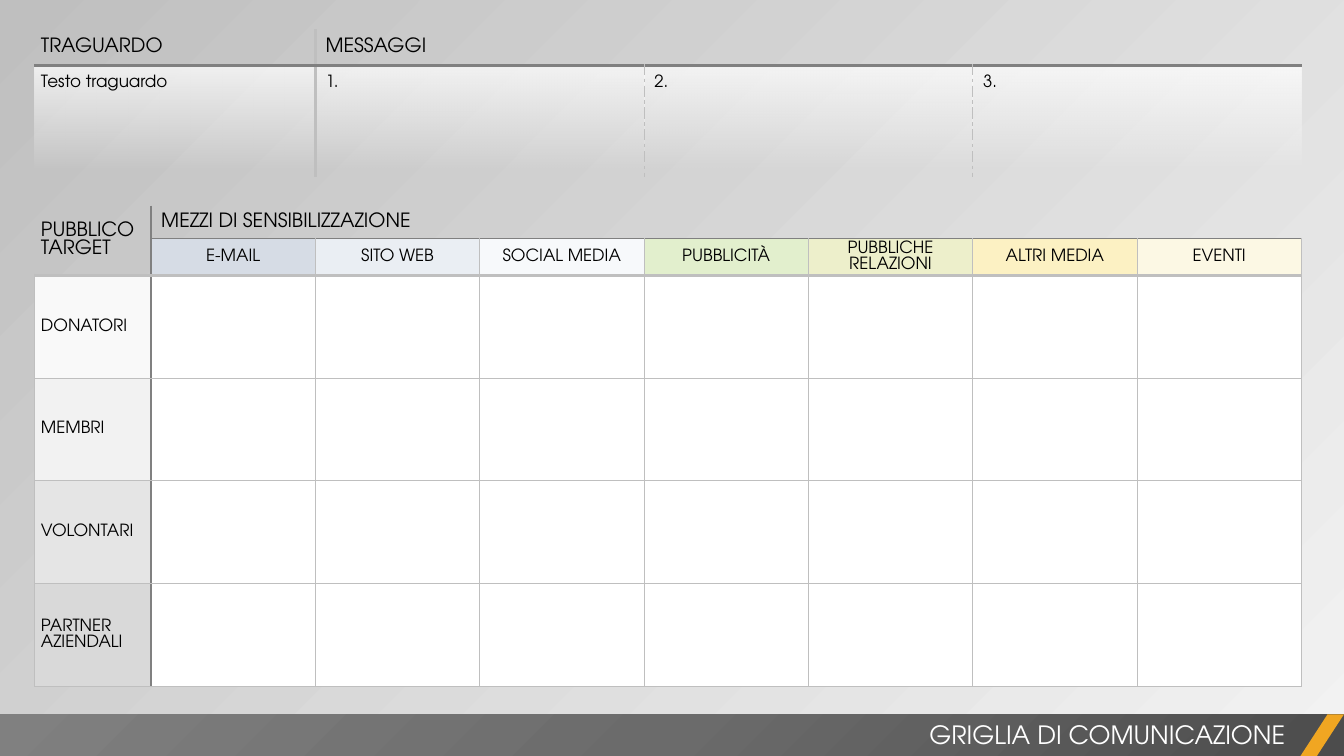
import pptx
import pptx.dml.color
import pptx.enum.shapes
import pptx.enum.text
import pptx.oxml
import pptx.oxml.ns
import pptx.util

Pt = pptx.util.Pt
qn = pptx.oxml.ns.qn
Align = pptx.enum.text.PP_ALIGN
Anchor = pptx.enum.text.MSO_ANCHOR
Preset = pptx.enum.shapes.MSO_SHAPE

FONT = "TeX Gyre Adventor"
COLOURS = {
    "text": "000000", "white": "FFFFFF", "accent": "F0A622",
    "line": "BFBFBF", "rule": "808080", "pale": "F2F2F2",
    "bar_dark": "4C4C4C", "bar_middle": "6B6B6B", "bar_light": "808080",
    "email": "D6DCE5", "website": "EAEEF3", "social": "F7F9FB",
    "advertising": "E2EFCD", "relations": "EDEFCB",
    "other_media": "FCF1C3", "events": "FCF8E4",
    "donors": "F9F9F9", "members": "F2F2F2",
    "volunteers": "E5E5E5", "partners": "D9D9D9",
}
LEFT = 24.6
AUDIENCE_WIDTH = 83.3
MEDIA_WIDTH = 117.4
NARROW_INSET, WIDE_INSET = 4.7, 7.3
BAR_TOP, BAR_HEIGHT = 510.2, 30

MEDIA = [
    ("E-MAIL", "email"), ("SITO WEB", "website"), ("SOCIAL MEDIA", "social"),
    ("PUBBLICITÀ", "advertising"), ("PUBBLICHE RELAZIONI", "relations"),
    ("ALTRI MEDIA", "other_media"), ("EVENTI", "events"),
]
AUDIENCES = [
    ("DONATORI", "donors"), ("MEMBRI", "members"),
    ("VOLONTARI", "volunteers"), ("PARTNER AZIENDALI", "partners"),
]


class SlideBuilder:
    def __init__(self, presentation):
        self.slide = presentation.slides.add_slide(presentation.slide_layouts[5])

    def colour(self, name):
        return pptx.dml.color.RGBColor.from_string(COLOURS[name])

    def gradient(self, fill, properties, stops, direction):
        fill.solid()
        fill.fore_color.rgb = self.colour("white")
        stop_xml = "".join(
            f'<a:gs pos="{position * 1000}"><a:srgbClr val="{COLOURS[name]}">'
            f'<a:alpha val="{opacity * 1000}"/></a:srgbClr></a:gs>'
            for position, name, opacity in stops
        )
        gradient = pptx.oxml.parse_xml(
            f'<a:gradFill {pptx.oxml.ns.nsdecls("a")} rotWithShape="1">'
            f"<a:gsLst>{stop_xml}</a:gsLst>{direction}</a:gradFill>"
        )
        properties.replace(properties.find(qn("a:solidFill")), gradient)

    def linear(self, angle):
        return f'<a:lin ang="{angle * 60000}" scaled="0"/>'

    def background(self):
        fill = self.slide.background.fill
        fill.solid()
        properties = self.slide.element.find(".//" + qn("p:bgPr"))
        self.gradient(fill, properties, [(0, "pale", 40), (100, "line", 100)], self.linear(225))

    def format_text(self, text_frame, size, colour="text", align=Align.LEFT):
        for paragraph in text_frame.paragraphs:
            paragraph.alignment = align
            paragraph.line_spacing = 1.0
            for run in paragraph.runs:
                run.font.name = FONT
                run.font.size = Pt(size)
                run.font.bold = False
                run.font.color.rgb = self.colour(colour)

    def shape(self, preset, left, top, width, height, colour):
        shape = self.slide.shapes.add_shape(preset, Pt(left), Pt(top), Pt(width), Pt(height))
        shape.shadow.inherit = False
        shape.fill.solid()
        shape.fill.fore_color.rgb = self.colour(colour)
        shape.line.fill.background()
        return shape

    def title(self, text, left, top, width, height):
        title = self.slide.shapes.title
        title.left, title.top, title.width, title.height = map(Pt, (left, top, width, height))
        text_frame = title.text_frame
        text_frame.text = text
        text_frame.word_wrap = True
        text_frame.auto_size = pptx.enum.text.MSO_AUTO_SIZE.SHAPE_TO_FIT_TEXT
        text_frame.vertical_anchor = Anchor.TOP
        self.format_text(text_frame, 18, "white", Align.RIGHT)
        title.element.getparent().append(title.element)

    def table(self, top, widths, heights):
        table = self.slide.shapes.add_table(
            len(heights), len(widths), Pt(LEFT), Pt(top), Pt(sum(widths)), Pt(sum(heights))
        ).table
        table.first_row = False
        table.horz_banding = False
        for column, width in zip(table.columns, widths):
            column.width = Pt(width)
        for row, height in zip(table.rows, heights):
            row.height = Pt(height)
        for cell in table.iter_cells():
            cell.fill.background()
        return table

    def cell(self, cell, text="", size=12, fill=None, align=Align.LEFT,
             anchor=Anchor.MIDDLE, left=0, top=0):
        cell.margin_left, cell.margin_top = Pt(left), Pt(top)
        cell.margin_right = cell.margin_bottom = 0
        cell.vertical_anchor = anchor
        if fill:
            cell.fill.solid()
            cell.fill.fore_color.rgb = self.colour(fill)
        if text:
            cell.text_frame.text = text
            self.format_text(cell.text_frame, size, align=align)

    def fade(self, cell):
        properties = cell._tc.get_or_add_tcPr()
        self.gradient(cell.fill, properties, [(0, "white", 75), (93, "white", 0)], self.linear(90))

    def border(self, tag, edge):
        if edge:
            name, width, dash = edge
            content = (f'<a:solidFill><a:srgbClr val="{COLOURS[name]}"/></a:solidFill>'
                       f'<a:prstDash val="{dash}"/>')
        else:
            width, content = 0, "<a:noFill/>"
        return pptx.oxml.parse_xml(
            f'<a:{tag} {pptx.oxml.ns.nsdecls("a")} w="{Pt(width)}">{content}</a:{tag}>'
        )

    def borders(self, table, vertical_edge, horizontal_edge):
        for row in range(len(table.rows)):
            for column in range(len(table.columns)):
                cell = table.cell(row, column)
                edges = {
                    "lnL": vertical_edge(row, column),
                    "lnR": vertical_edge(row, column + cell.span_width),
                    "lnT": horizontal_edge(row, column),
                    "lnB": horizontal_edge(row + cell.span_height, column),
                }
                properties = cell._tc.get_or_add_tcPr()
                for index, (tag, edge) in enumerate(edges.items()):
                    properties.insert(index, self.border(tag, edge))


def media_vertical(row, column):
    if column == 1:
        return "rule", 1.5, "solid"
    if row == 0 or (row == 1 and column == 0):
        return None
    return "line", 0.5, "solid"


def media_horizontal(row, column):
    if row == 0 or (row == 1 and column == 0):
        return None
    return {1: ("rule", 1, "solid"), 2: ("line", 2.25, "solid")}.get(row, ("line", 0.5, "solid"))


def message_vertical(row, column):
    if column == 1:
        return "line", 2.25, "solid"
    return ("line", 1, "sysDashDot") if row == 1 and column in (2, 3) else None


def message_horizontal(row, column):
    return ("rule", 2.25, "solid") if row == 1 else None


def add_media_grid(builder):
    table = builder.table(146.8, [AUDIENCE_WIDTH] + [MEDIA_WIDTH] * len(MEDIA),
                          [23.8, 26] + [73.4] * len(AUDIENCES))
    table.cell(0, 0).merge(table.cell(1, 0))
    table.cell(0, 1).merge(table.cell(0, len(MEDIA)))
    builder.cell(table.cell(0, 0), "PUBBLICO TARGET", 14, left=NARROW_INSET)
    builder.cell(table.cell(0, 1), "MEZZI DI SENSIBILIZZAZIONE", 14, left=WIDE_INSET)
    for column, (medium, colour) in enumerate(MEDIA, 1):
        builder.cell(table.cell(1, column), medium, fill=colour, align=Align.CENTER)
    for row, (audience, colour) in enumerate(AUDIENCES, 2):
        builder.cell(table.cell(row, 0), audience, fill=colour, left=NARROW_INSET)
        for column in range(1, len(MEDIA) + 1):
            builder.cell(table.cell(row, column), fill="white")
    builder.borders(table, media_vertical, media_horizontal)


def add_message_grid(builder):
    table = builder.table(21, [AUDIENCE_WIDTH + MEDIA_WIDTH] + [2 * MEDIA_WIDTH] * 3, [25.7, 80])
    table.cell(0, 1).merge(table.cell(0, 3))
    builder.cell(table.cell(0, 0), "TRAGUARDO", 14, left=NARROW_INSET)
    builder.cell(table.cell(0, 1), "MESSAGGI", 14, left=WIDE_INSET)
    for column, text in enumerate(["Testo traguardo", "1.", "2.", "3."]):
        cell = table.cell(1, column)
        inset = WIDE_INSET if column else NARROW_INSET
        builder.cell(cell, text, anchor=Anchor.TOP, left=inset, top=7.2)
        builder.fade(cell)
    builder.borders(table, message_vertical, message_horizontal)


def main():
    presentation = pptx.Presentation()
    presentation.slide_width, presentation.slide_height = Pt(960), Pt(540)
    builder = SlideBuilder(presentation)
    builder.background()
    add_media_grid(builder)
    bar = builder.shape(Preset.RECTANGLE, 0, BAR_TOP, 960, BAR_HEIGHT, "bar_dark")
    builder.gradient(
        bar.fill, bar.element.spPr,
        [(0, "bar_dark", 100), (50, "bar_middle", 100), (100, "bar_light", 100)],
        '<a:path path="circle"><a:fillToRect l="100000" t="100000"/></a:path>',
    )
    stripe = builder.shape(Preset.PARALLELOGRAM, 928.8, BAR_TOP, 31.2, BAR_HEIGHT, "accent")
    stripe.adjustments[0] = 0.65
    builder.title("GRIGLIA DI COMUNICAZIONE", 378, 510.3, 547.2, 28.8)
    add_message_grid(builder)
    presentation.save("out.pptx")


if __name__ == "__main__":
    main()
